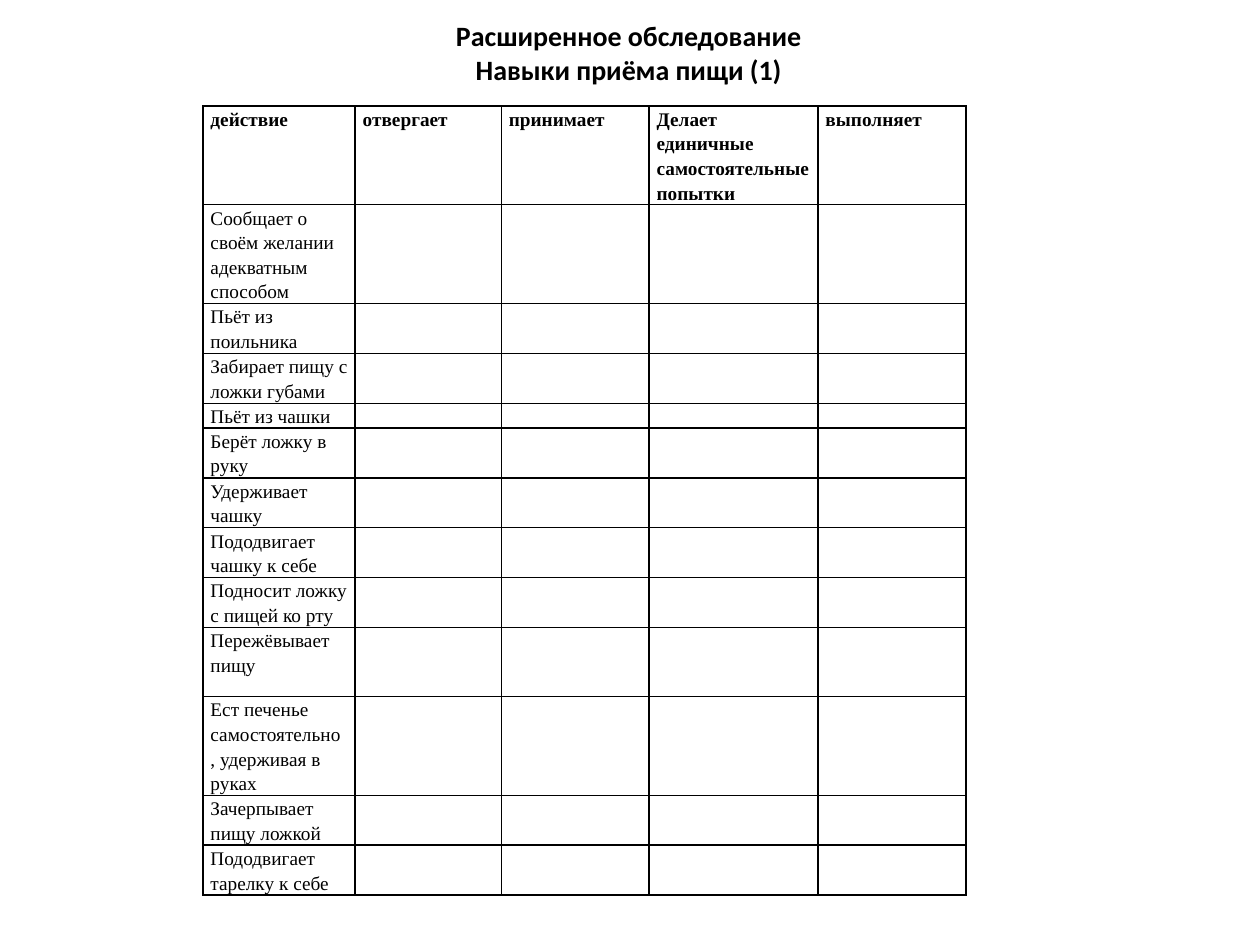
from lxml import etree
from pptx import Presentation
from pptx.dml.color import RGBColor
from pptx.enum.text import MSO_ANCHOR, PP_ALIGN
from pptx.oxml.ns import qn
from pptx.util import Pt

CENTER = PP_ALIGN.CENTER
TOP = MSO_ANCHOR.TOP
BLACK, WHITE = "000000", "FFFFFF"

# Content
TITLE = ["Расширенное обследование", "Навыки приёма пищи (1)"]
HEADERS = [
    ("действие", 87),
    ("отвергает", 83.5),
    ("принимает", 84.5),
    ("Делает единичные самостоятельные попытки", 96.5),
    ("выполняет", 84.5),
]
# Each action with its row height
ACTIONS = [
    ("Сообщает о своём желании адекватным способом", 56.5),
    ("Пьёт из поильника", 28.5),
    ("Забирает пищу с ложки губами", 28.5),
    ("Пьёт из чашки", 14),
    ("Берёт ложку в руку", 28.5),
    ("Удерживает чашку", 28.5),
    ("Пододвигает чашку к себе", 28.5),
    ("Подносит ложку с пищей ко рту", 28.5),
    ("Пережёвывает пищу", 39.5),
    ("Ест печенье самостоятельно , удерживая в руках", 56.5),
    ("Зачерпывает пищу ложкой", 28.5),
    ("Пододвигает тарелку к себе", 28.5),
]
HEADER_HEIGHT = 56.5
TABLE_LEFT, TABLE_TOP = 116, 60.5
TEXT_SIZE = 11


def color(value):
    return RGBColor.from_string(value)


def add_run(paragraph, text, font, size, bold):
    run = paragraph.add_run()
    run.text = text
    run.font.name = font
    run.font.size = Pt(size)
    run.font.bold = bold
    run.font.color.rgb = color(BLACK)


def add_borders(cell):
    properties = cell._tc.get_or_add_tcPr()
    for position, side in enumerate(("lnL", "lnR", "lnT", "lnB")):
        line = etree.Element(qn(f"a:{side}"), w=str(Pt(1)))
        fill = etree.SubElement(line, qn("a:solidFill"))
        etree.SubElement(fill, qn("a:srgbClr"), val=BLACK)
        properties.insert(position, line)


def fill_cell(cell, text, bold):
    cell.margin_left = cell.margin_right = Pt(4.3)
    cell.margin_top = cell.margin_bottom = Pt(0)
    cell.fill.solid()
    cell.fill.fore_color.rgb = color(WHITE)
    add_borders(cell)
    paragraph = cell.text_frame.paragraphs[0]
    if text:
        paragraph.line_spacing = 1.15
        paragraph.space_after = Pt(10)
        add_run(paragraph, text, "Times New Roman", TEXT_SIZE, bold)
    else:
        # Small end mark keeps empty cells from stretching the row
        etree.SubElement(paragraph._p, qn("a:endParaRPr"), sz=str(TEXT_SIZE * 100))


presentation = Presentation()
presentation.slide_width, presentation.slide_height = Pt(720), Pt(540)
slide = presentation.slides.add_slide(presentation.slide_layouts[6])

# Skills table
widths = [width for _, width in HEADERS]
heights = [HEADER_HEIGHT] + [height for _, height in ACTIONS]
rows = [[text for text, _ in HEADERS]]
rows += [[action] + [""] * (len(HEADERS) - 1) for action, _ in ACTIONS]
table = slide.shapes.add_table(
    len(rows), len(widths), Pt(TABLE_LEFT), Pt(TABLE_TOP), Pt(sum(widths)), Pt(sum(heights))
).table
for column, width in zip(table.columns, widths):
    column.width = Pt(width)
for row_index, (texts, height) in enumerate(zip(rows, heights)):
    table.rows[row_index].height = Pt(height)
    for column_index, text in enumerate(texts):
        fill_cell(table.cell(row_index, column_index), text, row_index == 0)

# Title
title_box = slide.shapes.add_textbox(Pt(252), Pt(7.2), Pt(214.5), Pt(67.7))
title_frame = title_box.text_frame
title_frame.word_wrap = False
title_frame.vertical_anchor = TOP
for index, text in enumerate(TITLE):
    paragraph = title_frame.add_paragraph() if index else title_frame.paragraphs[0]
    paragraph.alignment = CENTER
    add_run(paragraph, text, "Calibri", 16, True)

presentation.save("out.pptx")
